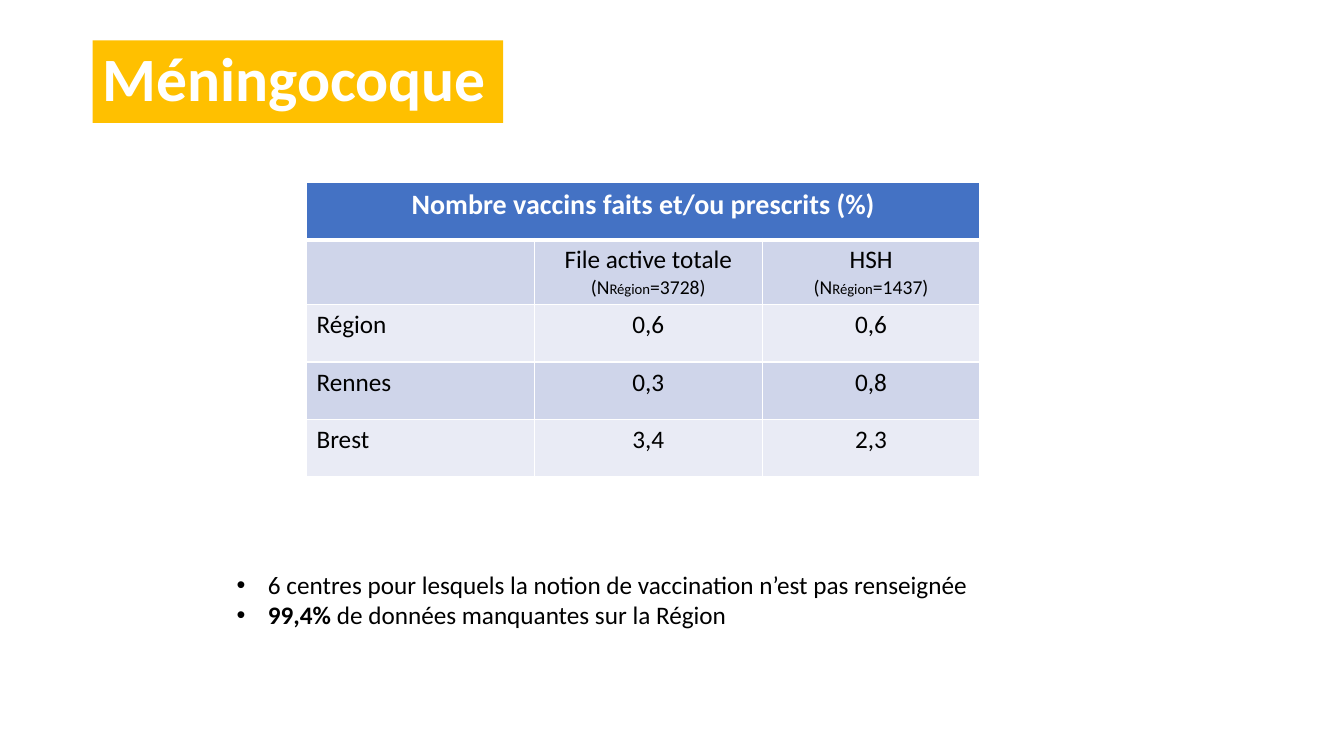
from lxml import etree
from pptx import Presentation
from pptx.dml.color import RGBColor
from pptx.enum.shapes import MSO_SHAPE as Shape
from pptx.enum.text import MSO_ANCHOR as Anchor, PP_ALIGN as Align
from pptx.oxml.ns import qn
from pptx.util import Inches, Pt

WHITE = RGBColor(0xFF, 0xFF, 0xFF)
BLACK = RGBColor(0, 0, 0)
GOLD = RGBColor(0xFF, 0xC0, 0x00)
BLUE = RGBColor(0x44, 0x72, 0xC4)
BAND_DARK = RGBColor(0xCF, 0xD5, 0xEA)
BAND_LIGHT = RGBColor(0xE9, 0xEB, 0xF5)

COLUMN_WIDTHS = [2.26, 2.26, 2.16]
GROUPS = [("File active totale", 3728), ("HSH", 1437)]
RATES = [
    ("Région", "0,6", "0,6"),
    ("Rennes", "0,3", "0,8"),
    ("Brest", "3,4", "2,3"),
]
REMARKS = [
    [("6 centres pour lesquels la notion de vaccination n’est pas renseignée", False)],
    [("99,4% ", True), ("de données manquantes sur la Région", False)],
]


def style(paragraph, size, color=BLACK, bold=False, align=Align.LEFT):
    paragraph.alignment = align
    font = paragraph.font
    font.name, font.size, font.bold = "Calibri", Pt(size), bold
    font.color.rgb = color


def add_title(slide, left, top, width, height):
    banner = slide.shapes.add_shape(
        Shape.RECTANGLE, Inches(left), Inches(top), Inches(width), Inches(height))
    banner.shadow.inherit = False
    banner.fill.solid()
    banner.fill.fore_color.rgb = GOLD
    banner.line.fill.background()
    frame = banner.text_frame
    frame.word_wrap = True
    frame.vertical_anchor = Anchor.MIDDLE
    title = frame.paragraphs[0]
    title.text = "Méningocoque"
    title.line_spacing = 0.9
    style(title, 44, WHITE, True)


def set_borders(cell, top, bottom):
    properties = cell._tc.get_or_add_tcPr()
    for side, points in (("L", 1), ("R", 1), ("T", top), ("B", bottom)):
        line = etree.SubElement(properties, qn(f"a:ln{side}"), w=str(Pt(points)))
        fill = etree.SubElement(line, qn("a:solidFill"))
        etree.SubElement(fill, qn("a:srgbClr"), val=str(WHITE))


def fill_cell(cell, row, color):
    set_borders(cell, 3 if row == 1 else 1, 3 if row == 0 else 1)
    cell.fill.solid()
    cell.fill.fore_color.rgb = color


def write_group(cell, name, count):
    cell.vertical_anchor = Anchor.MIDDLE
    heading = cell.text_frame.paragraphs[0]
    heading.text = name
    style(heading, 18, align=Align.CENTER)
    sample = cell.text_frame.add_paragraph()
    style(sample, 14, align=Align.CENTER)
    for text, size in (("(N", 14), ("Région", 10.5), (f"={count})", 14)):
        run = sample.add_run()
        run.text = text
        run.font.size = Pt(size)


def add_rates_table(slide, left, top, width, height):
    rates = slide.shapes.add_table(
        len(RATES) + 2, len(COLUMN_WIDTHS),
        Inches(left), Inches(top), Inches(width), Inches(height)).table
    for column, column_width in zip(rates.columns, COLUMN_WIDTHS):
        column.width = Inches(column_width)
    for row in range(len(rates.rows)):
        color = BLUE if row == 0 else BAND_DARK if row % 2 else BAND_LIGHT
        for column in range(len(COLUMN_WIDTHS)):
            fill_cell(rates.cell(row, column), row, color)

    header = rates.cell(0, 0)
    header.merge(rates.cell(0, len(COLUMN_WIDTHS) - 1))
    header.text = "Nombre vaccins faits et/ou prescrits (%)"
    style(header.text_frame.paragraphs[0], 20, WHITE, True, Align.CENTER)
    style(rates.cell(1, 0).text_frame.paragraphs[0], 18)
    for column, (name, count) in enumerate(GROUPS, 1):
        write_group(rates.cell(1, column), name, count)
    for row, values in enumerate(RATES, 2):
        for column, value in enumerate(values):
            cell = rates.cell(row, column)
            cell.text = value
            style(cell.text_frame.paragraphs[0], 18,
                  align=Align.CENTER if column else Align.LEFT)


def add_remarks(slide, left, top, width, height):
    frame = slide.shapes.add_textbox(
        Inches(left), Inches(top), Inches(width), Inches(height)).text_frame
    frame.word_wrap = True
    for index, pieces in enumerate(REMARKS):
        remark = frame.add_paragraph() if index else frame.paragraphs[0]
        style(remark, 18)
        properties = remark._p.get_or_add_pPr()
        properties.set("marL", str(Inches(0.31)))
        properties.set("indent", str(Inches(-0.31)))
        bullet_font = etree.Element(qn("a:buFont"), typeface="Arial")
        bullet = etree.Element(qn("a:buChar"), char="•")
        properties.insert(0, bullet_font)
        properties.insert(1, bullet)
        for text, bold in pieces:
            run = remark.add_run()
            run.text = text
            run.font.bold = bold


def main():
    deck = Presentation()
    deck.slide_width, deck.slide_height = Inches(13.33), Inches(7.5)
    slide = deck.slides.add_slide(deck.slide_layouts[6])
    add_title(slide, 0.92, 0.4, 4.07, 0.82)
    add_rates_table(slide, 3.04, 1.81, sum(COLUMN_WIDTHS), 2.85)
    add_remarks(slide, 2.25, 5.6, 8.43, 0.71)
    deck.save("out.pptx")


if __name__ == "__main__":
    main()
